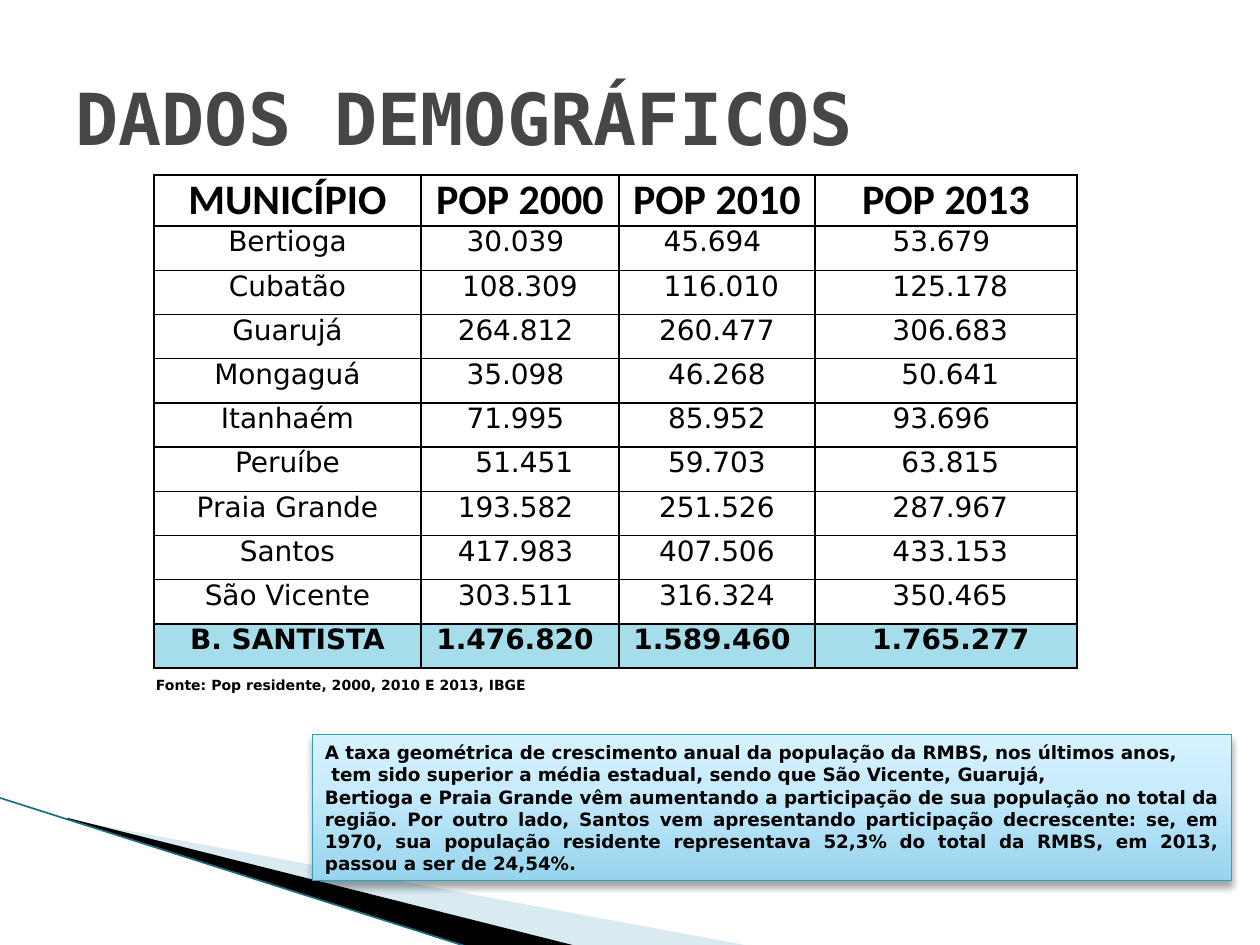
from lxml.etree import SubElement
from pptx import Presentation
from pptx.dml.color import RGBColor
from pptx.enum.shapes import MSO_CONNECTOR, MSO_SHAPE
from pptx.enum.text import MSO_ANCHOR, PP_ALIGN
from pptx.oxml.ns import qn
from pptx.util import Pt

BLACK = RGBColor(0x00, 0x00, 0x00)
TITLE_GREY = RGBColor(0x46, 0x46, 0x46)
PALE_BLUE = RGBColor(0xA0, 0xCB, 0xDC)
DARK_TEAL = RGBColor(0x1B, 0x6E, 0x80)
TEAL = RGBColor(0x2D, 0xA2, 0xBF)
TOTAL_BLUE = RGBColor(0xA6, 0xDD, 0xEA)
CALLOUT_STOPS = [
    (0, RGBColor(0x96, 0xD4, 0xEE)),
    (65, RGBColor(0xC9, 0xEC, 0xFC)),
    (100, RGBColor(0xD7, 0xF2, 0xFF)),
]

TITLE = {"name": "DejaVu Sans Mono", "size": Pt(41), "bold": True}
HEADER = {"name": "Calibri", "size": Pt(24), "bold": True}
BODY = {"name": "DejaVu Sans", "size": Pt(16), "bold": False}
TOTAL = {**BODY, "bold": True}
SOURCE = {**TOTAL, "size": Pt(8)}
CALLOUT = {**TOTAL, "size": Pt(10.5)}

COLUMN_WIDTHS = [152.6, 113.1, 112, 149.7]
HEADER_HEIGHT, ROW_HEIGHT = 29.2, 25.28
# Spaces around the figures shift them within their centred cells
POPULATION = [
    ("MUNICÍPIO", "POP 2000", "POP 2010", "POP 2013"),
    ("Bertioga", "30.039 ", "45.694 ", "53.679 "),
    ("Cubatão", "108.309", " 116.010", " 125.178"),
    ("Guarujá", "264.812 ", "260.477", " 306.683"),
    ("Mongaguá", "35.098 ", "46.268", " 50.641"),
    ("Itanhaém", "71.995 ", "85.952", "93.696 "),
    ("Peruíbe", " 51.451", "59.703", " 63.815"),
    ("Praia Grande", "193.582 ", "251.526", " 287.967"),
    ("Santos", "417.983 ", "407.506", " 433.153"),
    ("São Vicente", "303.511 ", "316.324", " 350.465"),
    ("B. SANTISTA", "1.476.820 ", "1.589.460 ", " 1.765.277"),
]
CALLOUT_TEXT = [
    "A taxa geométrica de crescimento anual da população da RMBS, nos últimos anos,",
    " tem sido superior a média estadual, sendo que São Vicente, Guarujá, ",
    "Bertioga e Praia Grande vêm aumentando a participação de sua população no total "
    "da região. Por outro lado, Santos vem apresentando participação decrescente: se, "
    "em 1970, sua população residente representava 52,3% do total da RMBS, em 2013, "
    "passou a ser de 24,54%.",
]


def write(frame, lines, font, color=BLACK, align=PP_ALIGN.LEFT):
    for index, line in enumerate(lines):
        para = frame.paragraphs[0] if index == 0 else frame.add_paragraph()
        para.alignment = align
        span = para.add_run()
        span.text = line
        for name, value in font.items():
            setattr(span.font, name, value)
        span.font.color.rgb = color


def add_text(page, left, top, width, height, text, font, color, anchor):
    box = page.shapes.add_textbox(Pt(left), Pt(top), Pt(width), Pt(height))
    box.text_frame.word_wrap = True
    box.text_frame.vertical_anchor = anchor
    write(box.text_frame, [text], font, color)


def add_color(parent, color, alpha=None):
    node = SubElement(parent, qn("a:srgbClr"), val=str(color))
    if alpha is not None:
        SubElement(node, qn("a:alpha"), val=str(alpha * 1000))


def add_wedge(page, points, color, alpha=100):
    corners = [(Pt(x), Pt(y)) for x, y in points]
    builder = page.shapes.build_freeform(*corners[0])
    builder.add_line_segments(corners[1:])
    wedge = builder.convert_to_shape()
    wedge.shadow.inherit = False
    wedge.line.fill.background()
    wedge.fill.solid()
    wedge.fill.fore_color.rgb = color
    if alpha < 100:
        node = wedge._element.spPr.find(qn("a:solidFill"))
        SubElement(node[0], qn("a:alpha"), val=str(alpha * 1000))


def add_line(page, start, end, color, width):
    line = page.shapes.add_connector(
        MSO_CONNECTOR.STRAIGHT, *(Pt(value) for value in start + end))
    line.line.color.rgb = color
    line.line.width = Pt(width)
    SubElement(line._element.spPr, qn("a:effectLst"))


def add_borders(cell):
    props = cell._tc.get_or_add_tcPr()
    for side in ("L", "R", "T", "B"):
        border = SubElement(props, qn(f"a:ln{side}"), w=str(Pt(1)))
        add_color(SubElement(border, qn("a:solidFill")), BLACK)


def add_population_table(page, left, top):
    last = len(POPULATION) - 1
    height = HEADER_HEIGHT + last * ROW_HEIGHT
    table = page.shapes.add_table(
        len(POPULATION), len(COLUMN_WIDTHS),
        Pt(left), Pt(top), Pt(sum(COLUMN_WIDTHS)), Pt(height)).table
    table.first_row = table.horz_banding = False
    for column, width in zip(table.columns, COLUMN_WIDTHS):
        column.width = Pt(width)
    for index, values in enumerate(POPULATION):
        table.rows[index].height = Pt(ROW_HEIGHT if index else HEADER_HEIGHT)
        font = {0: HEADER, last: TOTAL}.get(index, BODY)
        for cell, value in zip(table.rows[index].cells, values):
            cell.margin_left = cell.margin_right = Pt(3.6)
            cell.margin_top = cell.margin_bottom = 0
            add_borders(cell)
            if index == last:
                cell.fill.solid()
                cell.fill.fore_color.rgb = TOTAL_BLUE
            else:
                cell.fill.background()
            write(cell.text_frame, [value], font, align=PP_ALIGN.CENTER)


def add_callout(page, left, top, width, height):
    box = page.shapes.add_shape(
        MSO_SHAPE.RECTANGLE, Pt(left), Pt(top), Pt(width), Pt(height))
    box.line.color.rgb = TEAL
    box.line.width = Pt(0.75)
    # Gradient rising from the lower edge
    box.fill.gradient()
    box.fill.gradient_angle = 90
    props = box._element.spPr
    stops = props.find(qn("a:gradFill")).find(qn("a:gsLst"))
    for stop in list(stops):
        stops.remove(stop)
    for position, color in CALLOUT_STOPS:
        add_color(SubElement(stops, qn("a:gs"), pos=str(position * 1000)), color)
    # Soft shadow below
    box.shadow.inherit = False
    shadow = SubElement(
        props.find(qn("a:effectLst")), qn("a:outerShdw"),
        blurRad=str(Pt(4)), dist=str(Pt(3)), dir="5400000", rotWithShape="0")
    add_color(shadow, BLACK, 35)
    box.text_frame.word_wrap = True
    box.text_frame.vertical_anchor = MSO_ANCHOR.MIDDLE
    write(box.text_frame, CALLOUT_TEXT, CALLOUT, align=PP_ALIGN.JUSTIFY)


def main():
    deck = Presentation()
    deck.slide_width, deck.slide_height = Pt(720), Pt(540)
    page = deck.slides.add_slide(deck.slide_layouts[6])

    # Corner decoration
    add_wedge(page, [(39.6, 468.5), (428.4, 540.5), (328.3, 540.5), (39.6, 468)],
              PALE_BLUE, 40)
    add_wedge(page, [(38.2, 467.3), (329, 540.5), (267.8, 541), (38.9, 468)], BLACK)
    add_line(page, (-0.5, 455.8), (267, 541), DARK_TEAL, 0.95)

    # Title, table and its source
    add_text(page, 36, 21.6, 648, 90, "DADOS DEMOGRÁFICOS",
             TITLE, TITLE_GREY, MSO_ANCHOR.MIDDLE)
    add_population_table(page, 88, 100)
    add_text(page, 82, 383, 493, 39, "Fonte: Pop residente, 2000, 2010 E 2013, IBGE",
             SOURCE, BLACK, MSO_ANCHOR.TOP)

    # Commentary
    add_callout(page, 178.6, 419.8, 525, 83.5)
    deck.save("out.pptx")


if __name__ == "__main__":
    main()
